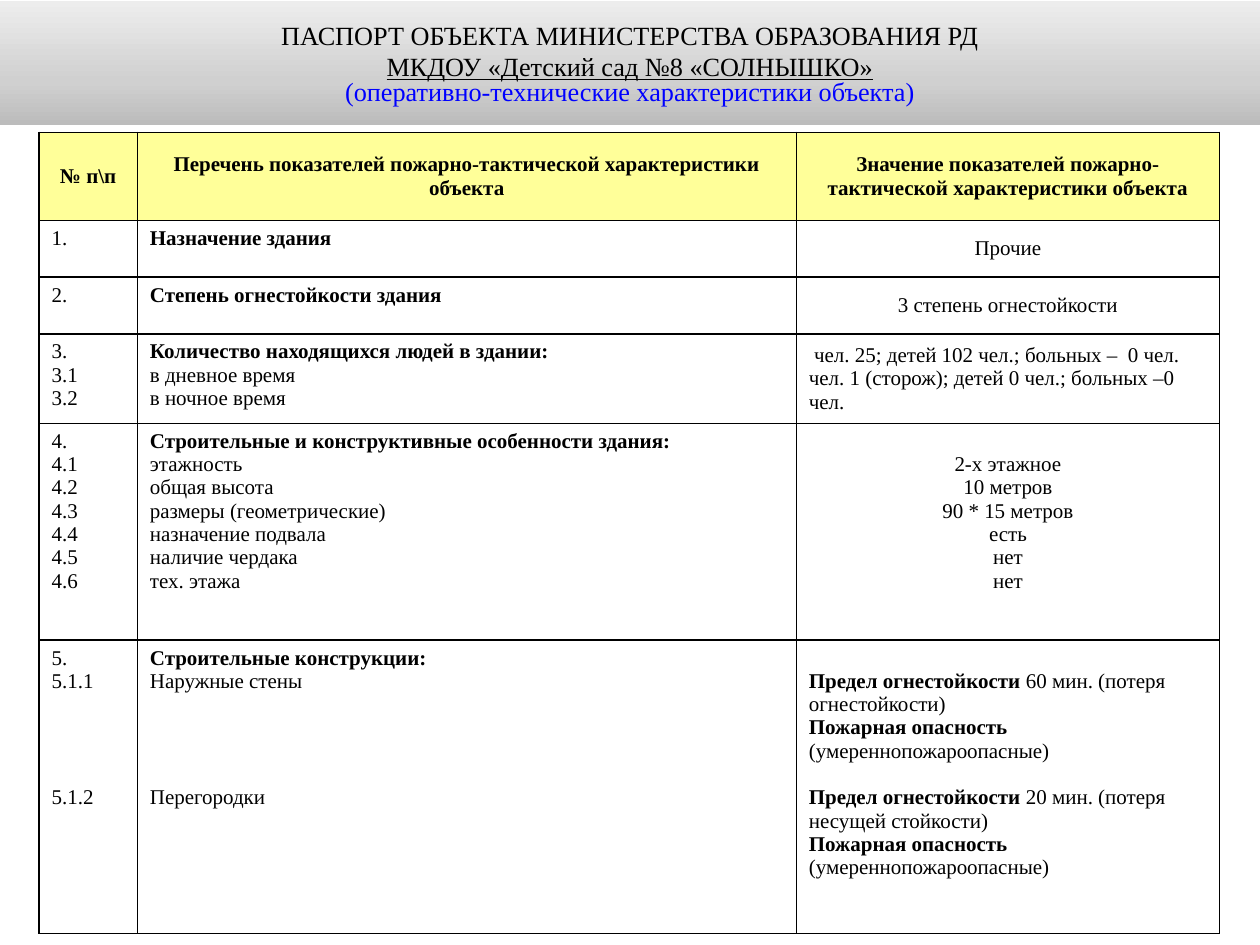
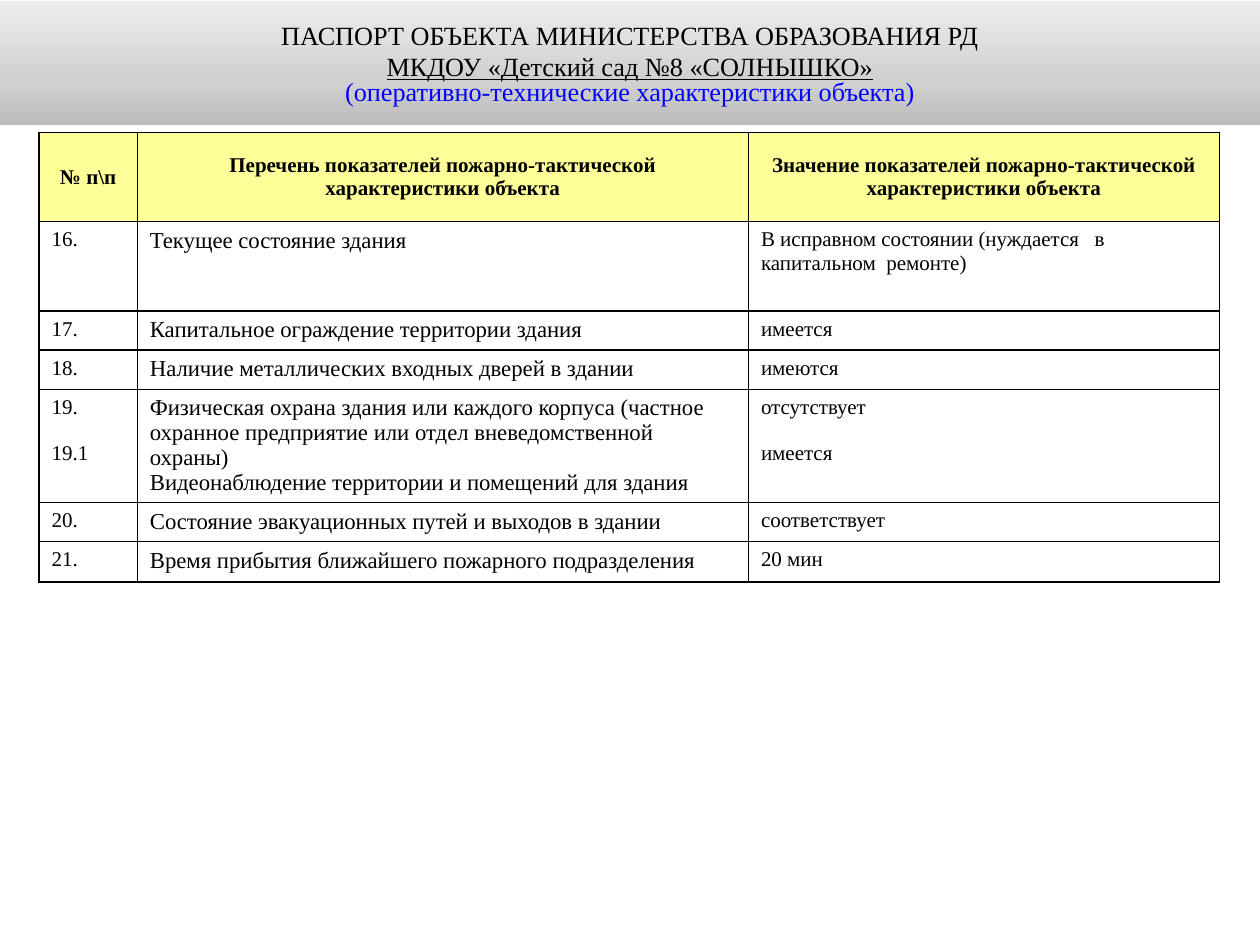
from dataclasses import dataclass

from lxml import etree
from pptx import Presentation
from pptx.dml.color import RGBColor
from pptx.enum.text import MSO_ANCHOR, MSO_AUTO_SIZE, PP_ALIGN
from pptx.oxml.ns import qn
from pptx.util import Inches, Pt

LEFT, CENTER = PP_ALIGN.LEFT, PP_ALIGN.CENTER
TOP, MIDDLE = MSO_ANCHOR.TOP, MSO_ANCHOR.MIDDLE
NO_AUTOFIT = MSO_AUTO_SIZE.NONE
TITLE_ONLY = 5

FONT = "Times New Roman"
BLACK, BLUE, WHITE, YELLOW = "000000", "0000FF", "FFFFFF", "FFFF99"
BAND_STOPS = [(0, "BCBCBC"), (35, "D0D0D0"), (100, "EDEDED")]
BODY_SIZE = 12
LINE_HEIGHT = 13.3

TITLE_LINES = [
    ("ПАСПОРТ ОБЪЕКТА МИНИСТЕРСТВА ОБРАЗОВАНИЯ РД", BLACK, False, 1.0),
    ("МКДОУ «Детский сад №8 «СОЛНЫШКО»", BLACK, True, 1.0),
    ("(оперативно-технические характеристики объекта)", BLUE, False, 0.8),
]
HEADINGS = [
    "№ п\\п",
    "Перечень показателей пожарно-тактической характеристики объекта",
    "Значение показателей пожарно-тактической характеристики объекта",
]


@dataclass
class Entry:
    """Cell content: |bold| marks bold text and None skips a line."""
    lines: list
    align: int = LEFT
    anchor: int = TOP
    size: int = BODY_SIZE
    fill: str = WHITE


BUILDING_ROWS = [
    [Entry(["1."]), Entry(["|Назначение здания|"]),
     Entry(["Прочие"], CENTER, MIDDLE)],
    [Entry(["2."]), Entry(["|Степень огнестойкости здания|"]),
     Entry(["3 степень огнестойкости"], CENTER, MIDDLE)],
    [Entry(["3.", "3.1", "3.2"]),
     Entry(["|Количество находящихся людей в здании:|", "в дневное время", "в ночное время"]),
     Entry([" чел. 25; детей 102 чел.; больных –  0 чел.",
            "чел. 1 (сторож); детей 0 чел.; больных –0 чел."], LEFT, MIDDLE)],
    [Entry(["4.", "4.1", "4.2", "4.3", "4.4", "4.5", "4.6"]),
     Entry(["|Строительные и конструктивные особенности здания:|", "этажность",
            "общая высота", "размеры (геометрические)", "назначение подвала",
            "наличие чердака", "тех. этажа"]),
     Entry([None, "2-х этажное", "10 метров", "90 * 15 метров", "есть", "нет", "нет"],
           CENTER)],
    [Entry(["5.", "5.1.1", None, None, None, None, "5.1.2"]),
     Entry(["|Строительные конструкции:|", "Наружные стены",
            None, None, None, None, "Перегородки"]),
     Entry([None, "|Предел огнестойкости |60 мин. (потеря огнестойкости)",
            "|Пожарная опасность |(умереннопожароопасные)", None,
            "|Предел огнестойкости |20 мин. (потеря несущей стойкости)",
            "|Пожарная опасность|", "(умереннопожароопасные)"])],
]

CONDITION_TEXTS = [
    (["16."], ["Текущее состояние здания"],
     ["В исправном состоянии (нуждается   в капитальном  ремонте)"]),
    (["17."], ["Капитальное ограждение территории здания"], ["имеется"]),
    (["18."], ["Наличие металлических входных дверей в здании"], ["имеются"]),
    (["19.", None, "19.1"],
     ["Физическая охрана здания или каждого корпуса (частное охранное предприятие "
      "или отдел вневедомственной охраны)",
      "Видеонаблюдение территории и помещений для здания"],
     ["отсутствует", None, "имеется"]),
    (["20."], ["Состояние эвакуационных путей и выходов в здании"], ["соответствует"]),
    (["21."], ["Время прибытия ближайшего пожарного подразделения"], ["20 мин"]),
]
CONDITION_ROWS = [[Entry(number), Entry(name, size=13), Entry(value)]
                  for number, name, value in CONDITION_TEXTS]


def color(value):
    """Turn a hex string into a colour."""
    return RGBColor.from_string(value)


def add_span(para, text, size, shade=BLACK, **format_values):
    """Add one formatted run to a paragraph."""
    span = para.add_run()
    span.text = text
    span.font.color.rgb = color(shade)
    values = {"name": FONT, "size": Pt(size), "bold": False, **format_values}
    for name, value in values.items():
        setattr(span.font, name, value)


def fill_band(box):
    """Fill a box with the grey gradient, dark at the bottom."""
    box.fill.gradient()
    box.fill.gradient_angle = 90
    stop_list = next(box.element.iter(qn("a:gsLst")))
    for stop in list(stop_list):
        stop_list.remove(stop)
    for position, shade in BAND_STOPS:
        stop = etree.SubElement(stop_list, qn("a:gs"), pos=str(position * 1000))
        etree.SubElement(stop, qn("a:srgbClr"), val=shade)


def add_title(page):
    """Format the title placeholder as the gradient band."""
    box = page.shapes.title
    box.left, box.top, box.width, box.height = map(Inches, (0, 0.01, 10, 0.98))
    fill_band(box)
    frame = box.text_frame
    values = {"word_wrap": True, "auto_size": NO_AUTOFIT, "vertical_anchor": MIDDLE,
              "margin_left": Inches(0.09), "margin_right": Inches(0.09),
              "margin_top": Inches(0.05), "margin_bottom": Inches(0.05)}
    for name, value in values.items():
        setattr(frame, name, value)
    for index, (text, shade, underline, spacing) in enumerate(TITLE_LINES):
        para = frame.add_paragraph() if index else frame.paragraphs[0]
        para.alignment = CENTER
        para.line_spacing = spacing
        add_span(para, text, 15, shade, underline=underline)


def add_borders(cell):
    """Draw a black one-point line on each side of a cell."""
    properties = cell._tc.get_or_add_tcPr()
    for index, side in enumerate(("lnL", "lnR", "lnT", "lnB")):
        line = etree.Element(qn(f"a:{side}"), w=str(Pt(1)))
        fill = etree.SubElement(line, qn("a:solidFill"))
        etree.SubElement(fill, qn("a:srgbClr"), val=BLACK)
        properties.insert(index, line)


def fill_cell(cell, entry):
    """Write an entry into a cell, turning skipped lines into spacing."""
    cell.fill.solid()
    cell.fill.fore_color.rgb = color(entry.fill)
    values = {"vertical_anchor": entry.anchor,
              "margin_left": Inches(0.1), "margin_right": Inches(0.1),
              "margin_top": Inches(0.05), "margin_bottom": Inches(0.05)}
    for name, value in values.items():
        setattr(cell, name, value)
    add_borders(cell)
    para, skipped = None, 0
    for line in entry.lines:
        if line is None:
            skipped += 1
            continue
        gap = Pt(skipped * LINE_HEIGHT)
        if para is None:
            para = cell.text_frame.paragraphs[0]
            cell.margin_top = Inches(0.05) + gap
        else:
            para = cell.text_frame.add_paragraph()
            para.space_before = gap
        para.alignment = entry.align
        for index, text in enumerate(line.split("|")):
            if text:
                add_span(para, text, entry.size, bold=index % 2 == 1)
        skipped = 0


def add_indicator_table(page, widths, heights, rows):
    """Add the table of indicators under its yellow heading row."""
    headings = [Entry([f"|{text}|"], CENTER, MIDDLE, fill=YELLOW) for text in HEADINGS]
    entries = [headings, *rows]
    table = page.shapes.add_table(
        len(entries), len(widths), Inches(0.31), Inches(1.05),
        Inches(sum(widths)), Inches(sum(heights))).table
    table.first_row = table.horz_banding = False
    for column, width in zip(table.columns, widths):
        column.width = Inches(width)
    for row, height, row_entries in zip(table.rows, heights, entries):
        row.height = Inches(height)
        for cell, entry in zip(row.cells, row_entries):
            fill_cell(cell, entry)


def main():
    """Build the passport deck."""
    deck = Presentation()
    deck.slide_width, deck.slide_height = Inches(10), Inches(7.5)
    tables = [
        ((0.78, 5.23, 3.36), (0.7, 0.45, 0.45, 0.71, 1.72, 2.33), BUILDING_ROWS),
        ((0.78, 4.85, 3.74), (0.71, 0.71, 0.31, 0.31, 0.9, 0.31, 0.32), CONDITION_ROWS),
    ]
    for widths, heights, rows in tables:
        page = deck.slides.add_slide(deck.slide_layouts[TITLE_ONLY])
        add_title(page)
        add_indicator_table(page, widths, heights, rows)
    deck.save("out.pptx")


if __name__ == "__main__":
    main()
